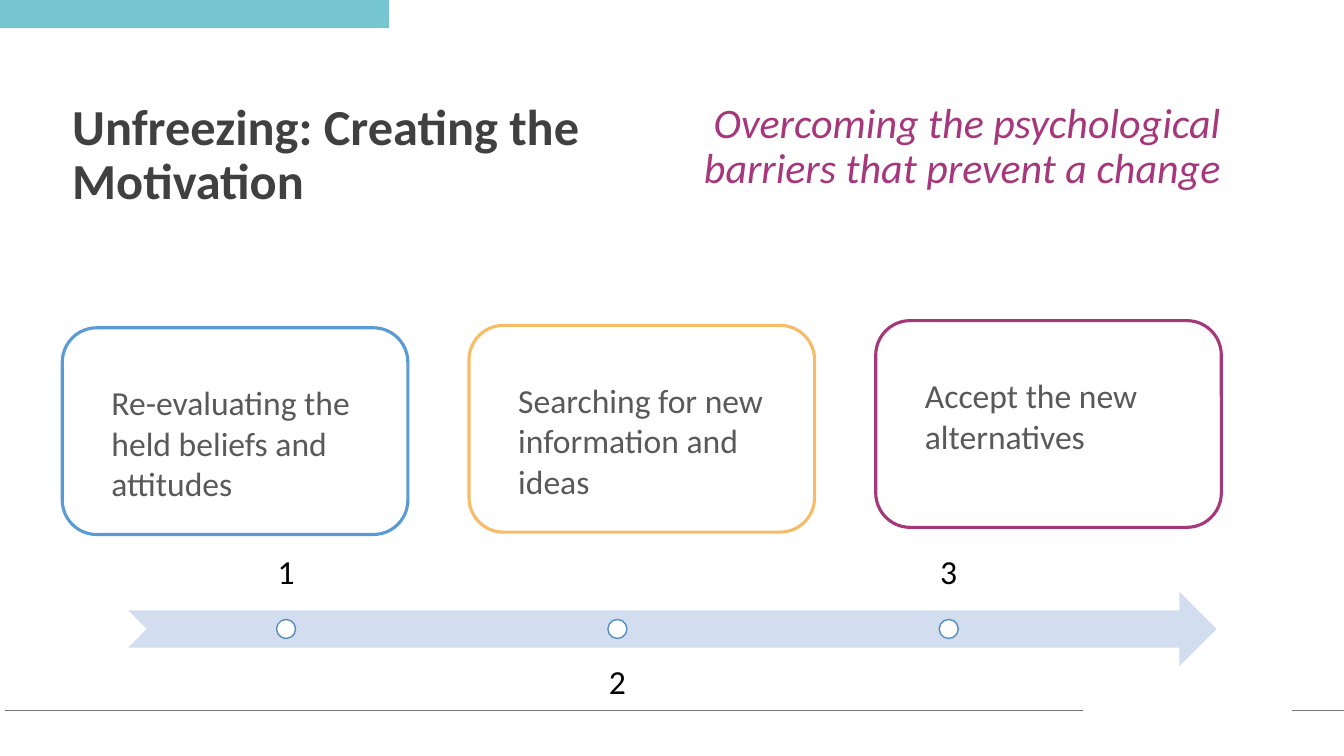
from pptx import Presentation
from pptx import util as u
from pptx.dml import color
from pptx.enum import shapes, text
from pptx.oxml import ns
from lxml import etree

TITLE = "Unfreezing: Creating the Motivation"
SUBTITLE = "Overcoming the psychological barriers that prevent a change "
CARDS = [
    ("Re-evaluating the held beliefs and attitudes", "5B9BD5", 8.26),
    ("Searching for new information and ideas", "F6BC67", 8.2),
    ("Accept the new alternatives", "A6377D", 8.08),
]
STEPS = ["1", "2", "3"]
RULES = [(27.28, 0.13), (33.87, 32.56)]

CARD_LEFT, CARD_STEP, CARD_WIDTH, CARD_HEIGHT = 1.57, 10.25, 8.71, 5.21
ARROW_LEFT, ARROW_TOP, ARROW_WIDTH, ARROW_HEIGHT = 3.23, 14.91, 27.43, 1.88
DOT_CENTER, DOT_STEP, DOT_SIZE = 7.21, 8.35, 0.48
LABEL_WIDTH, LABEL_TOPS = 7.95, (13.49, 16.31)
RULE_TOP = 17.91

SHAPE = shapes.MSO_SHAPE
CENTER = text.PP_ALIGN.CENTER


def paint(target, value):
    target.rgb = color.RGBColor.from_string(value)


def add_shape(kind, area, fill, line=None, weight=1):
    shape = page.shapes.add_shape(kind, *map(u.Cm, area))
    shape.shadow.inherit = False
    shape.fill.solid()
    paint(shape.fill.fore_color, fill)
    if line:
        paint(shape.line.color, line)
        shape.line.width = u.Pt(weight)
    else:
        shape.line.fill.background()
    return shape


def add_text(words, area, size, ink, font=None, para=None, frame=None):
    box = page.shapes.add_textbox(*map(u.Cm, area))
    body = box.text_frame
    body.word_wrap = True
    line = body.paragraphs[0]
    span = line.add_run()
    span.text = words
    paint(span.font.color, ink)
    face = {"name": "Calibri", "size": u.Pt(size), **(font or {})}
    for target, values in ((span.font, face), (line, para or {}), (body, frame or {})):
        for name, value in values.items():
            setattr(target, name, value)


def add_rule(start, end):
    rule = page.shapes.add_connector(
        shapes.MSO_CONNECTOR.STRAIGHT, *map(u.Cm, (start, RULE_TOP, end, RULE_TOP)))
    paint(rule.line.color, "797979")
    rule.line.width = u.Pt(0.5)
    etree.SubElement(rule._element.spPr, ns.qn("a:effectLst"))


deck = Presentation()
deck.slide_width, deck.slide_height = u.Cm(33.87), u.Cm(19.05)
page = deck.slides.add_slide(deck.slide_layouts[6])

add_shape(SHAPE.RECTANGLE, (0, 0, 9.8, 0.71), "76C6D2")
for start, end in RULES:
    add_rule(start, end)

add_text(TITLE, (1.57, 2.44, 14.58, 4.06), 36, "404040",
         {"bold": True}, {"line_spacing": 0.9})
add_text(SUBTITLE, (16.54, 2.44, 15.67, 3.12), 30, "A6377D",
         {"italic": True}, {"line_spacing": 0.9, "alignment": CENTER})

for index, (words, accent, top) in enumerate(CARDS):
    left = CARD_LEFT + index * CARD_STEP
    add_shape(SHAPE.ROUNDED_RECTANGLE, (left, top, CARD_WIDTH, CARD_HEIGHT),
              "FFFFFF", accent, 2.25)
    add_text(words, (left + 0.99, top + 1.25, 7.11, 3.33), 24, "595959")

add_shape(SHAPE.NOTCHED_RIGHT_ARROW,
          (ARROW_LEFT, ARROW_TOP, ARROW_WIDTH, ARROW_HEIGHT), "D2DEEF")
dot_top = ARROW_TOP + (ARROW_HEIGHT - DOT_SIZE) / 2
margins = {f"margin_{side}": u.Cm(0.48) for side in ("left", "top", "right", "bottom")}
anchors = (text.MSO_ANCHOR.BOTTOM, text.MSO_ANCHOR.TOP)
for index, number in enumerate(STEPS):
    center = DOT_CENTER + index * DOT_STEP
    row = index % 2
    add_text(number, (center - LABEL_WIDTH / 2, LABEL_TOPS[row], LABEL_WIDTH, ARROW_HEIGHT),
             24, "000000", para={"line_spacing": 0.9, "alignment": CENTER},
             frame={"vertical_anchor": anchors[row], **margins})
    add_shape(SHAPE.OVAL, (center - DOT_SIZE / 2, dot_top, DOT_SIZE, DOT_SIZE),
              "FFFFFF", "538DC1")

deck.save("out.pptx")
